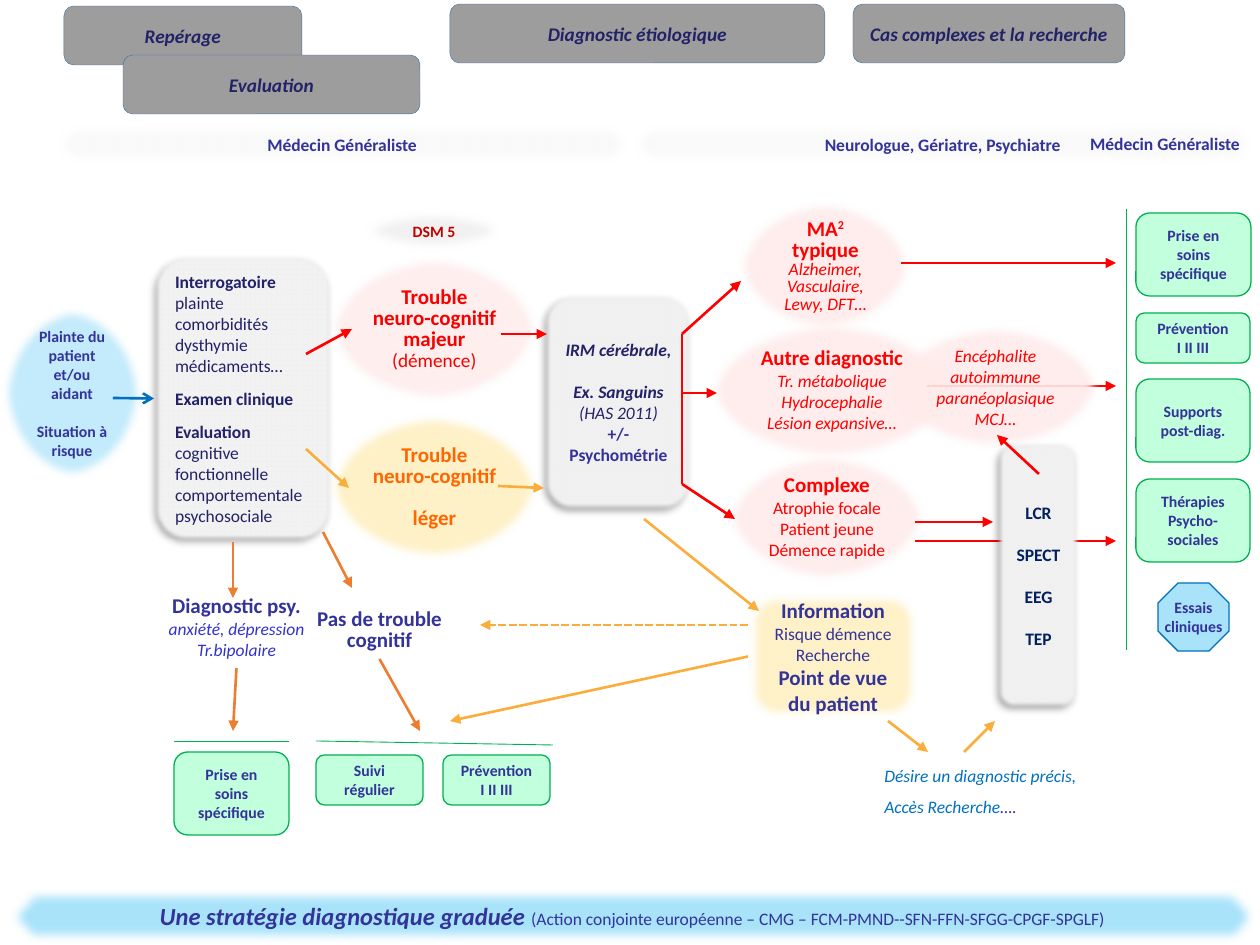
from lxml import etree
from pptx import Presentation
from pptx.dml.color import RGBColor
from pptx.enum.dml import MSO_LINE
from pptx.enum.shapes import MSO_CONNECTOR, MSO_SHAPE
from pptx.enum.text import MSO_ANCHOR, PP_ALIGN
from pptx.oxml.ns import qn
from pptx.util import Pt

PX = 914400 / 126
ROUNDED = MSO_SHAPE.FLOWCHART_ALTERNATE_PROCESS
ELLIPSE = MSO_SHAPE.OVAL
OCTAGON = MSO_SHAPE.OCTAGON
STRAIGHT = MSO_CONNECTOR.STRAIGHT
DASHED = MSO_LINE.SQUARE_DOT
MIDDLE, TOP = MSO_ANCHOR.MIDDLE, MSO_ANCHOR.TOP
CENTER, LEFT = PP_ALIGN.CENTER, PP_ALIGN.LEFT

COLORS = {
    "indigo": "333399", "violet": "3333CC", "navy": "222268", "header_text": "222267",
    "deep_blue": "002060", "blue": "0070C0", "sky": "A8E3FA", "pale_blue": "C4ECFC",
    "red": "FF0000", "strong_red": "F60000", "dark_red": "C00000", "pink": "FFECEB",
    "orange": "FF6600", "rust": "ED7D31", "amber": "FBAD3B", "cream": "FFF2C9",
    "green": "00B050", "mint": "C1FFDD", "grey": "9D9D9D", "light": "F2F2F2",
    "bar": "FAFAFA", "slate": "43739E",
}
# size, colour, bold, italic
STYLES = {
    "header": (11, "header_text", True, True),
    "bar": (10, "indigo", True, False),
    "title": (14, "indigo", True, True),
    "plain": (10, "indigo", False, False),
    "heading": (12, "indigo", True, False),
    "small": (9, "indigo", True, False),
    "psy": (10, "violet", False, True),
    "wish": (10, "blue", False, True),
    "exam": (10, "navy", False, False),
    "exam_bold": (10, "navy", True, False),
    "exam_italic": (10, "navy", False, True),
    "exam_strong": (10, "navy", True, True),
    "major": (12, "strong_red", True, False),
    "major_note": (11, "strong_red", False, False),
    "minor": (12, "orange", True, False),
    "red_title": (12, "red", True, False),
    "superscript": (12, "red", True, False),
    "red_plain": (10, "red", False, False),
    "red_italic": (10, "red", False, True),
    "dsm": (9, "dark_red", True, False),
    "test": (10, "deep_blue", True, False),
}

prs = Presentation()
prs.slide_width, prs.slide_height = round(1260 * PX), round(945 * PX)
slide = prs.slides.add_slide(prs.slide_layouts[6])


def add_block(kind, box, paragraphs, fill=None, line=None, width=0.75, soft=0, shadow=False,
              alpha=100, spacing=None, align=CENTER, wrap=True):
    """Each paragraph is a list of (style, text) runs, optionally led by its space before in points."""
    place = [round(v * PX) for v in box]
    if kind is None:
        shape = slide.shapes.add_textbox(*place)
    else:
        shape = slide.shapes.add_shape(kind, *place)
        shape.shadow.inherit = False
        shape.fill.solid()
        shape.fill.fore_color.rgb = RGBColor.from_string(COLORS[fill])
        if alpha < 100:
            color = shape._element.spPr.find(".//" + qn("a:srgbClr"))
            etree.SubElement(color, qn("a:alpha"), val=str(alpha * 1000))
        if line:
            shape.line.color.rgb = RGBColor.from_string(COLORS[line])
            shape.line.width = Pt(width)
        else:
            shape.line.fill.background()
        effects = shape._element.spPr.find(qn("a:effectLst"))
        if shadow:
            outer = etree.SubElement(effects, qn("a:outerShdw"), blurRad=str(Pt(4)),
                                     dist=str(Pt(3)), dir="8100000", algn="tr", rotWithShape="0")
            black = etree.SubElement(outer, qn("a:srgbClr"), val="000000")
            etree.SubElement(black, qn("a:alpha"), val="40000")
        if soft:
            etree.SubElement(effects, qn("a:softEdge"), rad=str(Pt(soft)))
    frame = shape.text_frame
    frame.word_wrap = wrap
    frame.vertical_anchor = TOP if kind is None else MIDDLE
    for index, content in enumerate(paragraphs):
        paragraph = frame.add_paragraph() if index else frame.paragraphs[0]
        paragraph.alignment = align
        if spacing:
            paragraph.line_spacing = Pt(spacing)
        if not isinstance(content[0], tuple):
            paragraph.space_before = Pt(content[0])
            content = content[1:]
        for style, text in content:
            run = paragraph.add_run()
            run.text = text
            size, color, run.font.bold, run.font.italic = STYLES[style]
            run.font.name = "Calibri"
            run.font.size = Pt(size)
            run.font.color.rgb = RGBColor.from_string(COLORS[color])
            if style == "superscript":
                run._r.get_or_add_rPr().set("baseline", "30000")
    return shape


def add_link(points, color, width=1.5, head="triangle", dash=None):
    link = slide.shapes.add_connector(STRAIGHT, *[round(v * PX) for v in points])
    link.line.color.rgb = RGBColor.from_string(COLORS[color])
    link.line.width = Pt(width)
    if dash:
        link.line.dash_style = dash
    if head:
        etree.SubElement(link.line._get_or_add_ln(), qn("a:tailEnd"), type=head)
    etree.SubElement(link._element.spPr, qn("a:effectLst"))
    return link


# Phases and the professionals in charge
for box, text in [((64, 6, 238, 59), "Repérage"), ((853, 4, 272, 59), "Cas complexes et la recherche"),
                  ((450, 4, 375, 59), "Diagnostic étiologique"), ((123, 55, 297, 59), "Evaluation")]:
    add_block(ROUNDED, box, [[("header", text)]], "grey", "slate", 0.25)
for box, text in [((54, 125, 576, 39), "Médecin Généraliste"),
                  ((630, 125, 625, 39), "Neurologue, Gériatre, Psychiatre"),
                  ((1102, 125, 126, 38), "Médecin Généraliste")]:
    add_block(OCTAGON, box, [[("bar", text)]], "bar", soft=5, wrap=False)

# Complaint, interview and imaging
add_link((915, 541, 1116, 541), "red")
add_block(ELLIPSE, (0, 306, 144, 175),
          [[("small", "Plainte du patient")], [("small", "et/ou aidant")],
           [11, ("small", "Situation à risque")]], "pale_blue", soft=5)
interview = add_block(
    ROUNDED, (154, 255, 179, 287),
    [[("exam_bold", "Interrogatoire")], [("exam", "plainte")], [("exam", "comorbidités")],
     [("exam", "dysthymie")], [("exam", "médicaments…")], [7, ("exam_bold", "Examen clinique")],
     [7, ("exam_bold", "Evaluation")], [("exam", "cognitive")], [("exam", "fonctionnelle")],
     [("exam", "comportementale psychosociale")]],
    "light", soft=2.5, shadow=True, align=LEFT)
add_block(ROUNDED, (544, 294, 149, 217),
          [[("exam_strong", "IRM cérébrale,")], [12, ("exam_strong", "Ex. Sanguins")],
           [("exam_italic", "(HAS 2011)")], [("bar", "+/- Psychométrie")]],
          "light", soft=2.5, shadow=True)
add_block(ROUNDED, (997, 442, 83, 267),
          [[("test", "LCR")]] + [[12, ("test", name)] for name in ("SPECT", "EEG", "TEP")],
          "light", soft=2.5, shadow=True)

# Cognitive disorders and their causes
add_block(ELLIPSE, (359, 209, 150, 44), [[("dsm", "DSM 5")]], "light", soft=5)
add_block(ELLIPSE, (328, 255, 213, 149),
          [[("major", "Trouble")], [("major", "neuro-cognitif")], [("major", "majeur")],
           [("major_note", "(démence)")]], "pink", soft=5, alpha=85, spacing=12)
add_block(ELLIPSE, (328, 413, 213, 149),
          [[("minor", "Trouble")], [("minor", "neuro-cognitif")], [12, ("minor", "léger")]],
          "cream", soft=5, spacing=12)
for box, title, style, details in [
        ((726, 452, 202, 132), "Complexe", "red_plain",
         ("Atrophie focale", "Patient jeune", "Démence rapide")),
        ((708, 320, 248, 142), "Autre diagnostic", "red_italic",
         ("Tr. métabolique", "Hydrocephalie", "Lésion expansive…"))]:
    add_block(ELLIPSE, box, [[("red_title", title)]] + [[(style, text)] for text in details],
              "pink", soft=5, alpha=90, spacing=12)
typical = add_block(ELLIPSE, (736, 199, 179, 135),
                    [[("red_title", "MA"), ("superscript", "2"), ("red_title", " typique")],
                     [("red_italic", "Alzheimer, Vasculaire, Lewy, DFT…")]],
                    "pink", soft=5, alpha=90, spacing=12)
typical.text_frame.paragraphs[1].line_spacing = Pt(10)
add_link((927, 386, 1116, 386), "red")
add_block(ELLIPSE, (888, 323, 215, 129),
          [[("red_italic", text)] for text in ("Encéphalite", "autoimmune", "paranéoplasique", "MCJ…")],
          "pink", soft=5, alpha=90, spacing=12)

# Outcomes and information
no_disorder = add_block(None, (294, 604, 171, 55), [[("heading", "Pas de trouble cognitif")]], spacing=12)
psychiatric = add_block(None, (151, 591, 171, 77),
                        [[("heading", "Diagnostic psy.")], [("psy", "anxiété, dépression")],
                         [("psy", "Tr.bipolaire")]], spacing=12)
information = add_block(ROUNDED, (748, 593, 170, 127),
                        [[("heading", "Information")], [("plain", "Risque démence Recherche")],
                         [("heading", "Point de vue du patient")]], "cream", soft=5)
add_block(None, (872, 764, 231, 60),
          [[("wish", "Désire un diagnostic précis,")],
           [9, ("wish", "Accès Recherche"), ("psy", "….")]], spacing=9, align=LEFT)

# Care offered
for box, lines in [((174, 752, 115, 83), ["Prise en soins spécifique"]),
                   ((316, 755, 107, 50), ["Suivi régulier"]),
                   ((443, 755, 107, 50), ["Prévention", "I II III"]),
                   ((1136, 213, 115, 83), ["Prise en soins spécifique"]),
                   ((1136, 313, 114, 50), ["Prévention", "I II III"]),
                   ((1136, 379, 114, 83), ["Supports", "post-diag."]),
                   ((1136, 479, 114, 83), ["Thérapies", "Psycho-sociales"])]:
    add_block(ROUNDED, box, [[("small", text)] for text in lines], "mint", "green")
add_block(OCTAGON, (1158, 583, 71, 68), [[("small", "Essais")], [("small", "cliniques")]],
          "sky", "blue", wrap=False)

# Paths between the steps
for color, routes in {
        "red": [(682, 334, 741, 281), (682, 393, 717, 393), (682, 484, 735, 519), (915, 522, 993, 522),
                (306, 354, 352, 329), (901, 263, 1116, 263), (501, 334, 547, 334), (1039, 474, 997, 435)],
        "amber": [(644, 519, 759, 611), (498, 486, 544, 488), (306, 449, 349, 488),
                  (888, 721, 928, 752), (964, 752, 995, 721)],
        "rust": [(233, 542, 233, 598), (323, 532, 352, 588)]}.items():
    for route in routes:
        add_link(route, color)
add_link((682, 484, 682, 334), "red", head=None)
add_link((748, 625, 480, 625), "amber", dash=DASHED)
for rule in [(174, 741, 289, 741), (316, 741, 553, 745), (1126, 209, 1126, 650)]:
    add_link(rule, "green", 0.5, head=None)
add_link((113, 398, 154, 398), "blue", head="arrow").end_connect(interview, 1)
add_link((748, 657, 450, 721), "amber").begin_connect(information, 1)
add_link((236, 668, 233, 731), "rust").begin_connect(psychiatric, 2)
add_link((380, 659, 420, 731), "rust").begin_connect(no_disorder, 2)

# Closing banner
add_block(OCTAGON, (11, 890, 1242, 52),
          [[("title", "Une stratégie diagnostique graduée "),
            ("plain", "(Action conjointe européenne – CMG – FCM-PMND--SFN-FFN-SFGG-CPGF-SPGLF)")]],
          "sky", soft=5, wrap=False)

prs.save("out.pptx")
